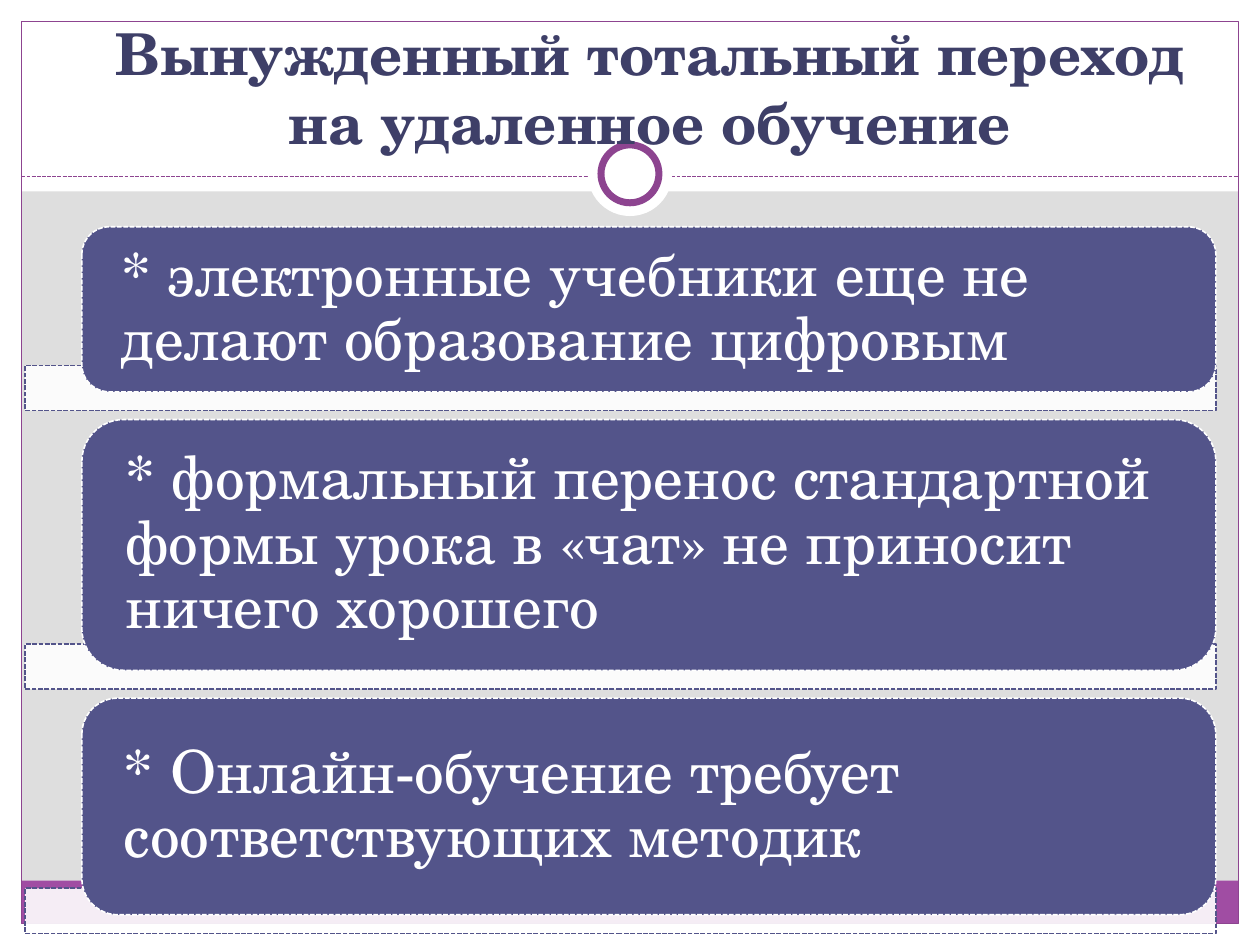
from lxml import etree
from pptx import Presentation
from pptx import util as u
from pptx.dml.color import RGBColor
from pptx.enum import dml, shapes, text
from pptx.oxml.ns import qn

WHITE = RGBColor(0xFF, 0xFF, 0xFF)
GREY = RGBColor(0xDE, 0xDE, 0xDE)
PURPLE = RGBColor(0xA0, 0x4D, 0xA3)
PLUM = RGBColor(0x8D, 0x44, 0x90)
INDIGO = RGBColor(0x53, 0x54, 0x8A)
NAVY = RGBColor(0x3E, 0x3F, 0x68)

WIDTH, HEIGHT, EDGE = 10, 7.5, 0.17
CARD_LEFT, CARD_WIDTH, CARD_GAP = 0.65, 9, 0.22
BAR_LEFT, BAR_HEIGHT, BAR_OVERLAP = 0.2, 0.36, 0.21

CARDS = [
    ("* электронные учебники еще не делают образование цифровым", 1.31),
    ("* формальный перенос стандартной формы урока в «чат» не приносит ничего хорошего", 1.99),
    ("* Онлайн-обучение требует соответствующих методик", 1.72),
]


class SlideBuilder:
    font = "TeX Gyre Schola"
    dash = dml.MSO_LINE.SQUARE_DOT

    def __init__(self, slide):
        self.slide = slide

    def background(self, color):
        fill = self.slide.background.fill
        fill.solid()
        fill.fore_color.rgb = color

    def outline(self, line, color, width, dashed):
        line.color.rgb = color
        line.width = u.Pt(width)
        if dashed:
            line.dash_style = self.dash

    def shape(self, kind, box, fill=None, line=None, width=0.75, dashed=False, alpha=None):
        sp = self.slide.shapes.add_shape(kind, *map(u.Inches, box))
        sp.shadow.inherit = False
        if fill is None:
            sp.fill.background()
        else:
            sp.fill.solid()
            sp.fill.fore_color.rgb = fill
        if alpha is not None:
            color = sp._element.spPr.find(qn("a:solidFill"))[0]
            etree.SubElement(color, qn("a:alpha"), val=str(alpha * 1000))
        if line is None:
            sp.line.fill.background()
        else:
            self.outline(sp.line, line, width, dashed)
        return sp

    def rect(self, box, **style):
        return self.shape(shapes.MSO_SHAPE.RECTANGLE, box, **style)

    def circle(self, cx, cy, size, **style):
        box = (cx - size / 2, cy - size / 2, size, size)
        return self.shape(shapes.MSO_SHAPE.OVAL, box, **style)

    def rule(self, x1, x2, y, color):
        cn = self.slide.shapes.add_connector(
            shapes.MSO_CONNECTOR.STRAIGHT, *map(u.Inches, (x1, y, x2, y)))
        self.outline(cn.line, color, 0.75, True)
        etree.SubElement(cn._element.spPr, qn("a:effectLst"))

    def label(self, sp, content, size, color, align, anchor, bold=False):
        tf = sp.text_frame
        tf.word_wrap = True
        tf.vertical_anchor = anchor
        tf.text = content
        p = tf.paragraphs[0]
        p.alignment = align
        r = p.runs[0]
        r.font.name = self.font
        r.font.size = u.Pt(size)
        r.font.bold = bold
        r.font.color.rgb = color
        return p

    def title(self, box, content):
        sp = self.slide.shapes.add_textbox(*map(u.Inches, box))
        self.label(sp, content, 33, NAVY, text.PP_ALIGN.CENTER,
                   text.MSO_ANCHOR.BOTTOM, bold=True)

    def card(self, top, height, content):
        bar_top = top + height - BAR_OVERLAP
        self.rect((BAR_LEFT, bar_top, CARD_LEFT + CARD_WIDTH - BAR_LEFT, BAR_HEIGHT),
                  fill=WHITE, alpha=90, line=INDIGO, width=0.9, dashed=True)
        sp = self.shape(shapes.MSO_SHAPE.ROUNDED_RECTANGLE,
                        (CARD_LEFT, top, CARD_WIDTH, height),
                        fill=INDIGO, line=WHITE, width=0.9, dashed=True)
        tf = sp.text_frame
        tf.margin_left = tf.margin_right = u.Inches(0.25)
        tf.margin_top = tf.margin_bottom = 0
        p = self.label(sp, content, 34, WHITE, text.PP_ALIGN.LEFT, text.MSO_ANCHOR.MIDDLE)
        p.line_spacing = 0.9


def main():
    prs = Presentation()
    prs.slide_width, prs.slide_height = u.Inches(WIDTH), u.Inches(HEIGHT)
    s = SlideBuilder(prs.slides.add_slide(prs.slide_layouts[6]))
    s.background(GREY)

    inner_width, inner_bottom = WIDTH - 2 * EDGE, HEIGHT - EDGE
    for box in [
        (0, inner_bottom, WIDTH, EDGE),
        (0, 0, WIDTH, 1.52),
        (0, 0, EDGE, HEIGHT),
        (WIDTH - EDGE, 0, EDGE, HEIGHT),
    ]:
        s.rect(box, fill=WHITE)
    s.rect((EDGE, 6.99, inner_width, 0.34), fill=PURPLE)
    s.rect((EDGE, EDGE, inner_width, HEIGHT - 2 * EDGE), line=PLUM)
    s.rule(EDGE, WIDTH - EDGE, 1.4, PLUM)
    s.circle(WIDTH / 2, 1.38, 0.67, fill=WHITE)
    s.circle(WIDTH / 2, 1.38, 0.46, fill=WHITE, line=PLUM, width=4)

    s.title((0.51, 0.04, 9.3, 1.25), "Вынужденный тотальный переход на удаленное обучение")

    top = 1.8
    for content, height in CARDS:
        s.card(top, height, content)
        top += height + CARD_GAP

    prs.save("out.pptx")


if __name__ == "__main__":
    main()
